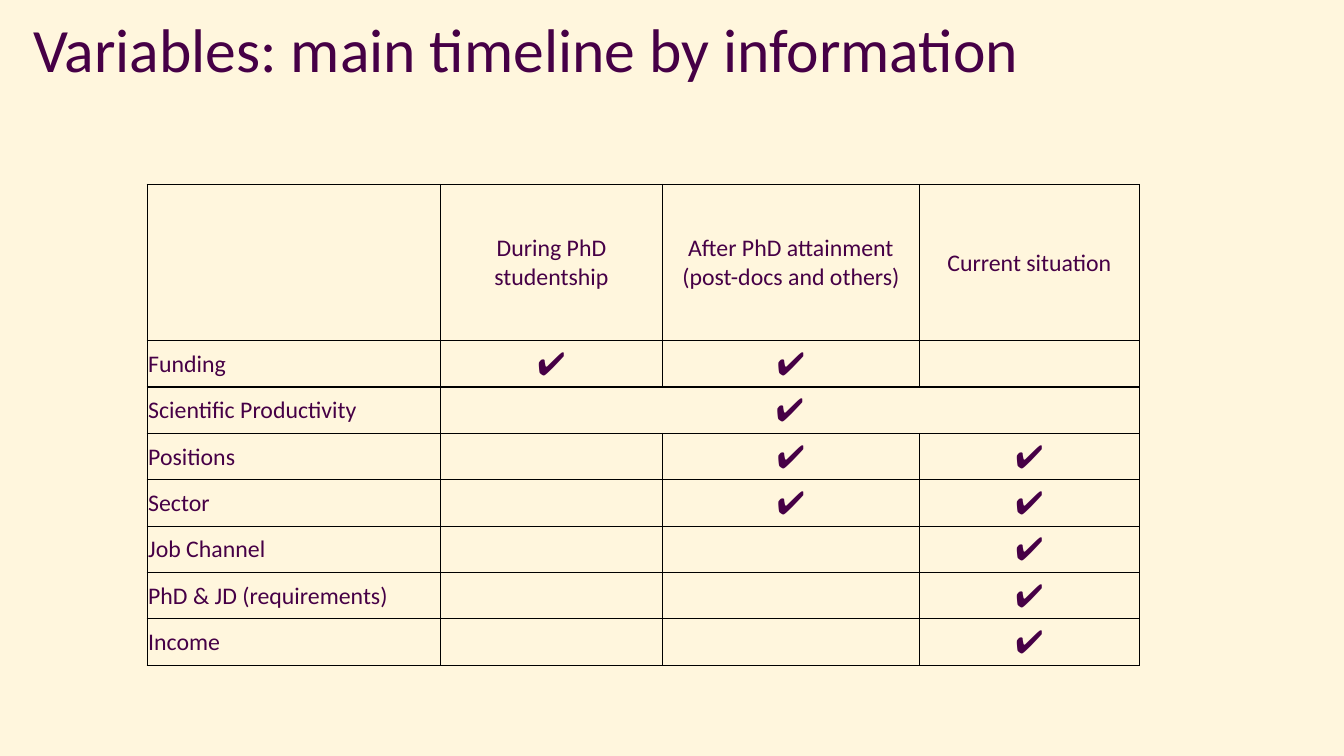
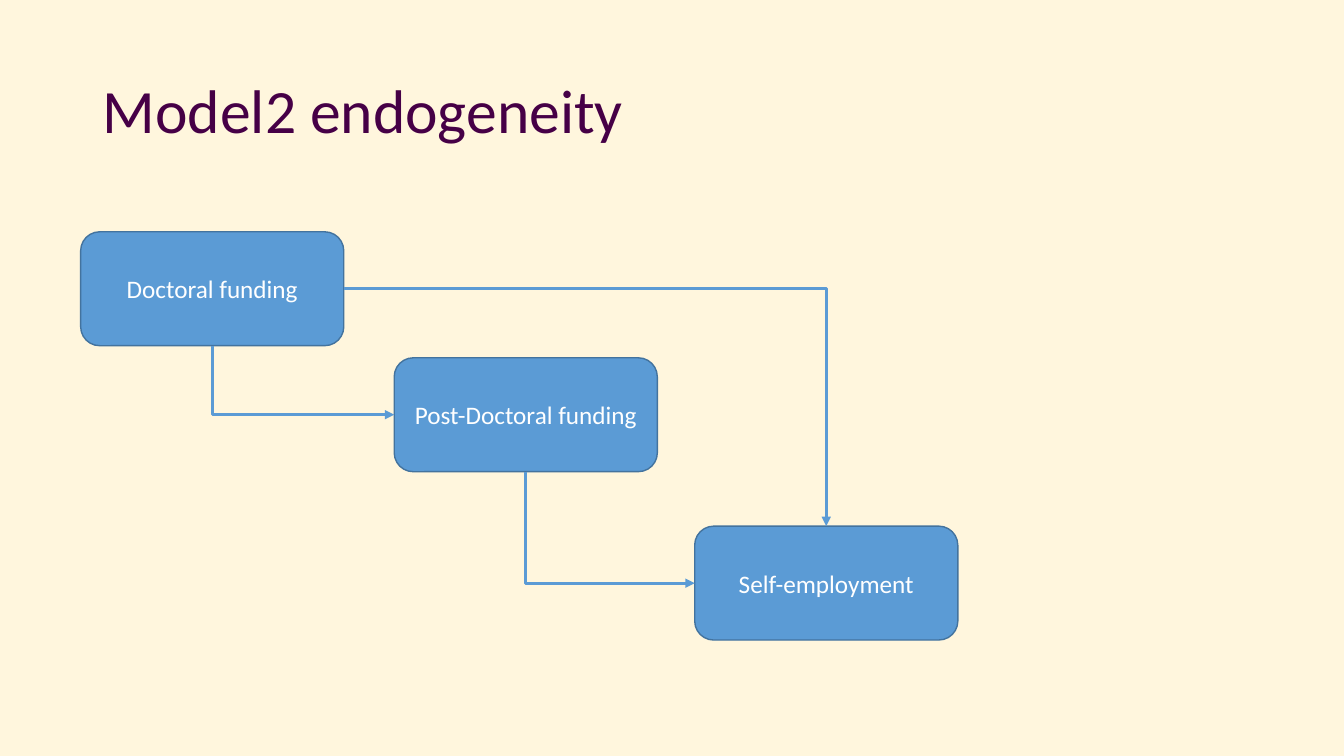
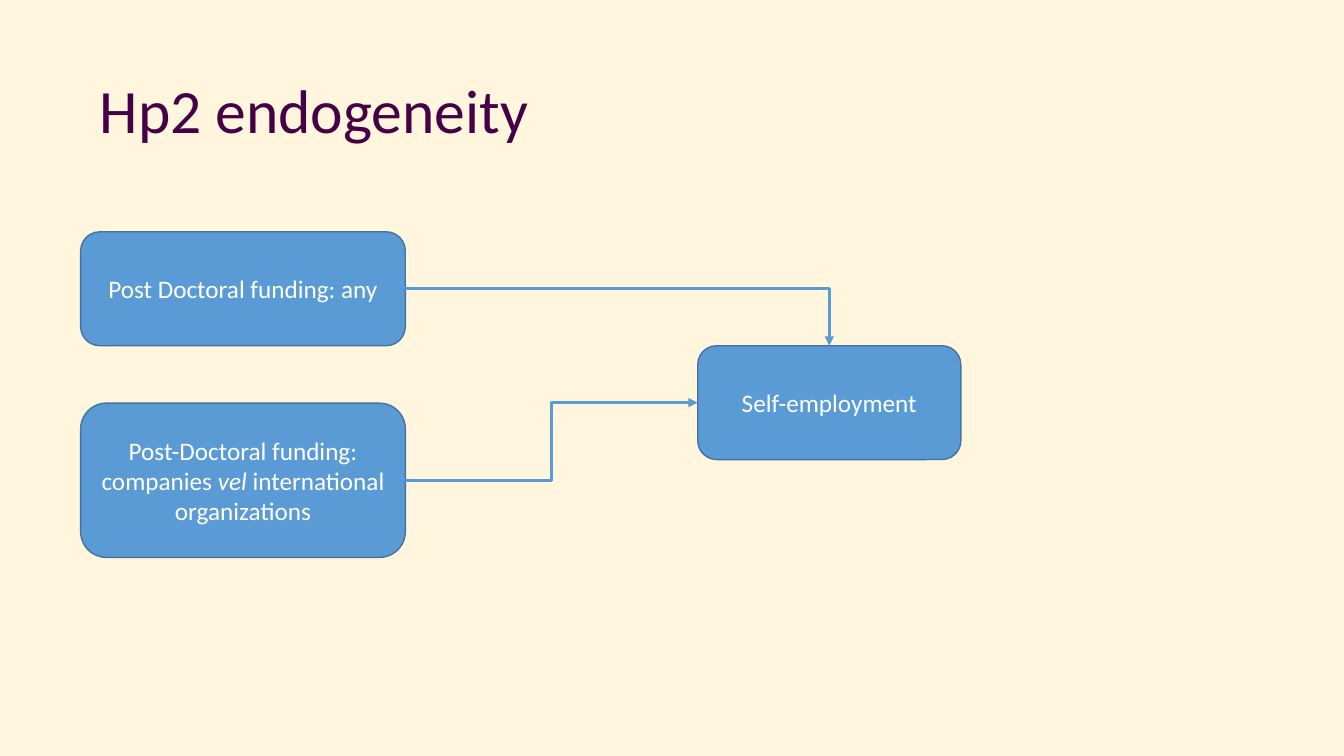
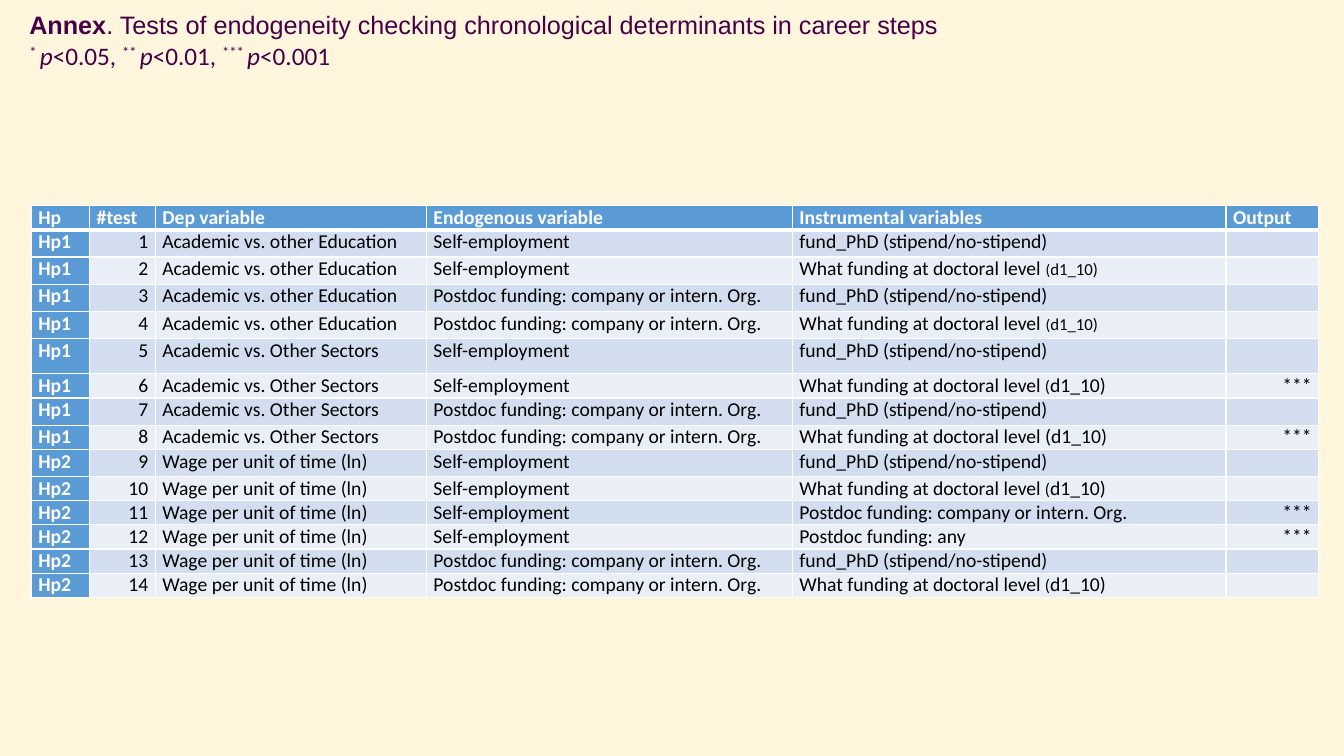
from lxml import etree
from pptx import Presentation, util as u
from pptx.dml.color import RGBColor
from pptx.enum import shapes, text
from pptx.oxml.ns import qn

CREAM = RGBColor(0xFF, 0xF6, 0xDD)
PLUM = RGBColor(0x46, 0x00, 0x46)
BLUE = RGBColor(0x5B, 0x9B, 0xD5)
NAVY = RGBColor(0x43, 0x73, 0x9E)
BAND = RGBColor(0xD2, 0xDE, 0xEF)
PALE = RGBColor(0xEA, 0xEF, 0xF7)
WHITE = RGBColor(0xFF, 0xFF, 0xFF)
BLACK = RGBColor(0x00, 0x00, 0x00)

FONT = "Calibri"
CELL = u.Inches(0.1)  # side of one square of the layout grid
LEFT, MID, RIGHT = text.PP_ALIGN.LEFT, text.PP_ALIGN.CENTER, text.PP_ALIGN.RIGHT
TOP_SITE, LEFT_SITE, BOTTOM_SITE, RIGHT_SITE = range(4)

TICK = "✔"
HEADS = ["", "During PhD studentship",
         "After PhD attainment (post-docs and others)", "Current situation"]
TOPICS = [
    ("Funding", TICK, TICK, ""),
    ("Scientific Productivity", TICK, "", ""),
    ("Positions", "", TICK, TICK),
    ("Sector", "", TICK, TICK),
    ("Job Channel", "", "", TICK),
    ("PhD & JD (requirements)", "", "", TICK),
    ("Income", "", "", TICK),
]

EDU, SECTOR, WAGE = ("Academic vs. other Education",
                     "Academic vs. Other Sectors", "Wage per unit of time (ln)")
SELF, POST = "Self-employment", "Postdoc funding: company or intern. Org."
FUND = "fund_PhD (stipend/no-stipend)"
LEVEL = "What funding at doctoral level"
SMALL = [(LEVEL + " ", {}), ("(", {"size": 11}), ("d1_10)", {"size": 12})]
MIXED = [(LEVEL, {}), (" (", {"size": 12}), ("d1_10)", {})]
STARS = "***"
TALL, SHORT = 2.7, 2.4
FIELDS = ["Hp", "#test", "Dep variable", "Endogenous variable",
          "Instrumental variables", "Output"]
TESTS = [  # hypothesis, three variables, output, row height
    ("Hp1", EDU, SELF, FUND, "", TALL),
    ("Hp1", EDU, SELF, SMALL, "", TALL),
    ("Hp1", EDU, POST, FUND, "", TALL),
    ("Hp1", EDU, POST, SMALL, "", TALL),
    ("Hp1", SECTOR, SELF, FUND, "", 3.5),
    ("Hp1", SECTOR, SELF, MIXED, STARS, SHORT),
    ("Hp1", SECTOR, POST, FUND, "", TALL),
    ("Hp1", SECTOR, POST, LEVEL + " (d1_10)", STARS, SHORT),
    ("Hp2", WAGE, SELF, FUND, "", TALL),
    ("Hp2", WAGE, SELF, MIXED, "", SHORT),
    ("Hp2", WAGE, SELF, POST, STARS, SHORT),
    ("Hp2", WAGE, SELF, "Postdoc funding: any", STARS, SHORT),
    ("Hp2", WAGE, POST, FUND, "", SHORT),
    ("Hp2", WAGE, POST, MIXED, "", SHORT),
]


def grid(*cells):
    return [u.Emu(round(n * CELL)) for n in cells]


def write(par, parts, size, color, align=LEFT, bold=False, font=FONT):
    """Fill a paragraph from a string or from (text, changes) pairs."""
    par.alignment = align
    if not parts:
        etree.SubElement(par._p, qn("a:endParaRPr"), sz=str(size * 100))
        return
    if isinstance(parts, str):
        parts = [(parts, {})]
    for words, diff in parts:
        run = par.add_run()
        run.text = words
        run.font.name = font
        run.font.size = u.Pt(diff.get("size", size))
        run.font.color.rgb = color
        run.font.bold = diff.get("bold", bold)
        run.font.italic = diff.get("italic", False)
        if "raise" in diff:
            run._r.get_or_add_rPr().set("baseline", str(diff["raise"] * 1000))


def start(deck, place):
    """Add a slide and return it with the text frame of its placed title."""
    slide = deck.slides.add_slide(deck.slide_layouts[5])
    head = slide.shapes.title
    head.left, head.top, head.width, head.height = grid(*place)
    frame = head.text_frame
    frame.word_wrap = True
    frame.auto_size = text.MSO_AUTO_SIZE.NONE
    frame.vertical_anchor = text.MSO_ANCHOR.MIDDLE
    return slide, frame


def titled(deck, words, place):
    slide, frame = start(deck, place)
    par = frame.paragraphs[0]
    par.line_spacing = 0.9
    write(par, words, 44, PLUM)
    return slide


def table(slide, left, top, cols, rows):
    frame = slide.shapes.add_table(len(rows), len(cols),
                                   *grid(left, top, sum(cols), sum(rows)))
    tab = frame.table
    tab.first_row = tab.horz_banding = False
    for col, wide in zip(tab.columns, grid(*cols)):
        col.width = wide
    for row, high in zip(tab.rows, grid(*rows)):
        row.height = high
    return tab


def border(cell, color, top=1, bottom=1):
    props = cell._tc.get_or_add_tcPr()
    widths = {"lnL": 1, "lnR": 1, "lnT": top, "lnB": bottom}
    for spot, (tag, wide) in enumerate(widths.items()):
        line = etree.Element(qn("a:" + tag), w=str(u.Pt(wide)))
        fill = etree.SubElement(line, qn("a:solidFill"))
        etree.SubElement(fill, qn("a:srgbClr"), val=str(color))
        props.insert(spot, line)


def inset(cell, side, top, bottom=0):
    cell.margin_left = cell.margin_right = u.Inches(side)
    cell.margin_top, cell.margin_bottom = u.Inches(top), u.Inches(bottom)


def box(slide, parts, *place):
    shape = slide.shapes.add_shape(shapes.MSO_SHAPE.ROUNDED_RECTANGLE, *grid(*place))
    shape.shadow.inherit = False
    shape.fill.solid()
    shape.fill.fore_color.rgb = BLUE
    shape.line.color.rgb = NAVY
    shape.line.width = u.Pt(1)
    frame = shape.text_frame
    frame.word_wrap = True
    frame.vertical_anchor = text.MSO_ANCHOR.MIDDLE
    write(frame.paragraphs[0], parts, 18, WHITE, MID)
    return shape


def link(slide, tail, out, head, into):
    """Join two boxes by an elbow arrow; it has one bend unless both sites face sideways."""
    line = slide.shapes.add_connector(shapes.MSO_CONNECTOR.ELBOW, 0, 0, 0, 0)
    line.begin_connect(tail, out)
    line.end_connect(head, into)
    line.line.color.rgb = BLUE
    line.line.width = u.Pt(2.25)
    props = line._element.spPr
    etree.SubElement(props.find(qn("a:ln")), qn("a:tailEnd"), type="triangle")
    etree.SubElement(props, qn("a:effectLst"))
    if (out, into) != (RIGHT_SITE, LEFT_SITE):
        props.find(qn("a:prstGeom")).set("prst", "bentConnector2")
    if out == BOTTOM_SITE:  # a quarter turn makes the arrow leave downwards
        wide, high = line.width, line.height
        line.left += (wide - high) // 2
        line.top += (high - wide) // 2
        line.width, line.height = high, wide
        frame = props.find(qn("a:xfrm"))
        frame.set("rot", "16200000")
        frame.set("flipH", "1")


def timeline(deck):
    slide = titled(deck, "Variables: main timeline by information", (2.3, 0, 115, 10.4))
    rows = [HEADS, *TOPICS]
    tab = table(slide, 14.6, 18.3, [29.1, 22, 25.5, 21.8],
                [15.5] + [4.6] * len(TOPICS))
    tab.cell(2, 1).merge(tab.cell(2, 3))
    for r, row in enumerate(rows):
        for c, words in enumerate(row):
            cell = tab.cell(r, c)
            cell.fill.background()
            border(cell, BLACK)
            inset(cell, 0.01, 0.01)
            cell.vertical_anchor = text.MSO_ANCHOR.MIDDLE
            write(cell.text_frame.paragraphs[0], words,
                  23 if words == TICK else 17, PLUM, MID if c else LEFT)


def model(deck):
    slide = titled(deck, "Model2 endogeneity", (9.2, 4, 115, 14.5))
    size = 26.1, 11.3
    first = box(slide, "Doctoral funding", 8, 23, *size)
    later = box(slide, "Post-Doctoral funding", 39.1, 35.5, *size)
    own = box(slide, SELF, 68.9, 52.2, *size)
    link(slide, first, RIGHT_SITE, own, TOP_SITE)
    link(slide, later, BOTTOM_SITE, own, LEFT_SITE)
    link(slide, first, BOTTOM_SITE, later, LEFT_SITE)


def second(deck):
    slide = titled(deck, "Hp2 endogeneity", (8.9, 4, 115, 14.5))
    whole = box(slide, "Post Doctoral funding: any", 8, 23, 32.2, 11.3)
    part = box(slide, [("Post-Doctoral funding: companies ", {}),
                       ("vel", {"italic": True}),
                       (" international organizations", {})], 8, 40, 32.2, 15.3)
    own = box(slide, SELF, 69.2, 34.3, 26.1, 11.3)
    link(slide, whole, RIGHT_SITE, own, TOP_SITE)
    link(slide, part, RIGHT_SITE, own, LEFT_SITE)


def annex(deck):
    slide, frame = start(deck, (1.9, 0.4, 102.1, 7.1))
    write(frame.paragraphs[0],
          [("Annex", {"bold": True}),
           (". Tests of endogeneity checking chronological determinants"
            " in career steps", {})], 18, PLUM, font="Arial")
    key = []
    for stars, level in (("* ", "<0.05, "), ("** ", "<0.01, "), ("*** ", "<0.001")):
        key += [(stars, {"raise": 30}), ("p", {"italic": True}), (level, {})]
    write(frame.add_paragraph(), key, 18, PLUM)

    tab = table(slide, 3.1, 20.4, [5.8, 6.5, 26.9, 36.3, 43, 9.2],
                [SHORT] + [test[-1] for test in TESTS])
    rows = [FIELDS] + [(hyp, str(n), *rest[:-1])
                       for n, (hyp, *rest) in enumerate(TESTS, 1)]
    for r, row in enumerate(rows):
        for c, words in enumerate(row):
            cell = tab.cell(r, c)
            head = r == 0 or c == 0
            cell.fill.solid()
            cell.fill.fore_color.rgb = BLUE if head else BAND if r % 2 else PALE
            border(cell, WHITE, top=3 if r == 1 else 1, bottom=1 if r else 3)
            inset(cell, 0.07, 0)
            write(cell.text_frame.paragraphs[0], words, 14,
                  WHITE if head else BLACK,
                  RIGHT if r and c in (1, 5) else LEFT, bold=head)


def main():
    deck = Presentation()
    deck.slide_width, deck.slide_height = u.Inches(13.33), u.Inches(7.5)
    back = deck.slide_master.background.fill
    back.solid()
    back.fore_color.rgb = CREAM
    for build in (timeline, model, second, annex):
        build(deck)
    deck.save("out.pptx")


if __name__ == "__main__":
    main()
